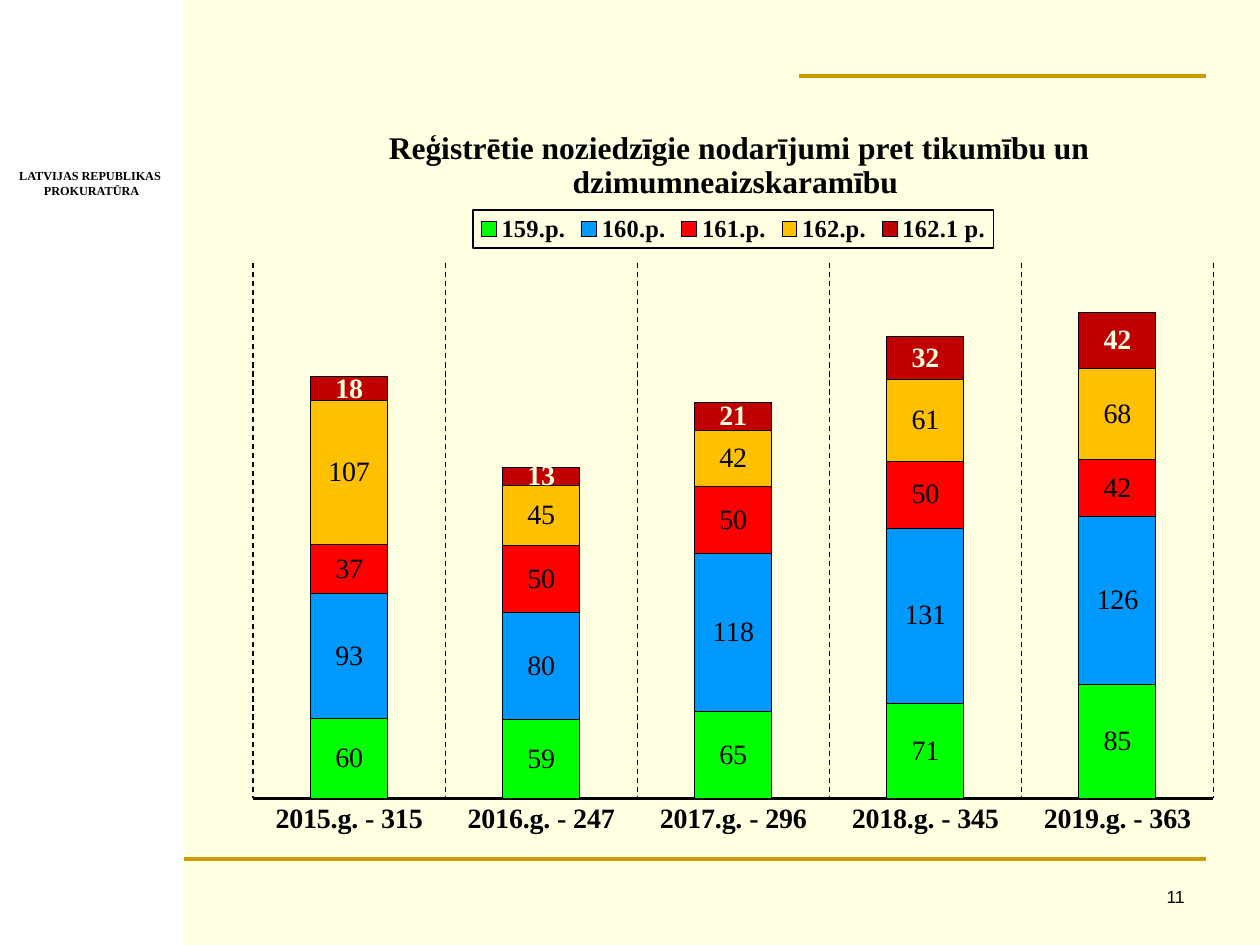
"""Build a slide with a stacked column chart of registered offences by year."""
import pptx
import pptx.chart.data
import pptx.dml.color
import pptx.enum.chart
import pptx.enum.dml
import pptx.enum.shapes
import pptx.enum.text
import pptx.oxml
import pptx.oxml.ns
import pptx.util

Inches = pptx.util.Inches
Pt = pptx.util.Pt
qn = pptx.oxml.ns.qn

COLORS = {
    "cream": "FFFFE1", "white": "FFFFFF", "gold": "CC9900", "black": "000000",
    "green": "00FF00", "blue": "0099FF", "red": "FF0000",
    "amber": "FFC000", "crimson": "C00000",
}
SERIF = "Times New Roman"
YEARS = ["2015.g. - 315", "2016.g. - 247", "2017.g. - 296", "2018.g. - 345", "2019.g. - 363"]
ARTICLES = [
    ("159.p.", [60, 59, 65, 71, 85], "green"),
    ("160.p.", [93, 80, 118, 131, 126], "blue"),
    ("161.p.", [37, 50, 50, 50, 42], "red"),
    ("162.p.", [107, 45, 42, 61, 68], "amber"),
    ("162.1 p.", [18, 13, 21, 32, 42], "crimson"),
]
TITLE = "Reģistrētie noziedzīgie nodarījumi pret tikumību un dzimumneaizskaramību "


def rgb(name):
    return pptx.dml.color.RGBColor.from_string(COLORS[name])


def style_font(font, size, color="black", bold=False, name=SERIF):
    font.size = Pt(size)
    font.bold = bold
    font.name = name
    font.color.rgb = rgb(color)


def style_line(line, color, width):
    line.color.rgb = rgb(color)
    line.width = Pt(width)


def add_panel(page, left, top, width, height, color):
    panel = page.shapes.add_shape(
        pptx.enum.shapes.MSO_SHAPE.RECTANGLE,
        Inches(left), Inches(top), Inches(width), Inches(height))
    panel.shadow.inherit = False
    panel.fill.solid()
    panel.fill.fore_color.rgb = rgb(color)
    panel.line.fill.background()


def add_rule(page, left, right, height):
    rule = page.shapes.add_connector(
        pptx.enum.shapes.MSO_CONNECTOR.STRAIGHT,
        Inches(left), Inches(height), Inches(right), Inches(height))
    style_line(rule.line, "gold", 2.25)
    rule._element.spPr.append(pptx.oxml.parse_xml(
        f'<a:effectLst {pptx.oxml.ns.nsdecls("a")}/>'))


def add_text(page, left, top, width, height, text, align, wrap, **font):
    box = page.shapes.add_textbox(Inches(left), Inches(top), Inches(width), Inches(height))
    box.text_frame.word_wrap = wrap
    box.text_frame.text = text
    for paragraph in box.text_frame.paragraphs:
        paragraph.alignment = align
        for span in paragraph.runs:
            style_font(span.font, **font)


def set_layout(element, index, x, y, width=None, height=None, inner=False):
    for old in element.findall(qn("c:layout")):
        element.remove(old)
    target = '<c:layoutTarget val="inner"/>' if inner else ""
    sizes = f'<c:w val="{width}"/><c:h val="{height}"/>' if width else ""
    element.insert(index, pptx.oxml.parse_xml(
        f'<c:layout {pptx.oxml.ns.nsdecls("c")}><c:manualLayout>{target}'
        f'<c:xMode val="edge"/><c:yMode val="edge"/>'
        f'<c:x val="{x}"/><c:y val="{y}"/>{sizes}</c:manualLayout></c:layout>'))


def fill_after(element, outline):
    line = f'<a:solidFill><a:srgbClr val="{COLORS["black"]}"/></a:solidFill>' if outline else "<a:noFill/>"
    element.addnext(pptx.oxml.parse_xml(
        f'<c:spPr {pptx.oxml.ns.nsdecls("c", "a")}>'
        f'<a:solidFill><a:srgbClr val="{COLORS["cream"]}"/></a:solidFill>'
        f'<a:ln w="{Pt(1)}">{line}</a:ln></c:spPr>'))


def style_series(series, color):
    series.format.fill.solid()
    series.format.fill.fore_color.rgb = rgb(color)
    style_line(series.format.line, "black", 0.5)
    labels = series.data_labels
    labels.show_value = True
    labels.position = pptx.enum.chart.XL_LABEL_POSITION.CENTER
    dark = color == "crimson"
    style_font(labels.font, 16, "cream" if dark else "black", dark)


def style_axes(chart):
    years = chart.category_axis
    years.major_tick_mark = pptx.enum.chart.XL_TICK_MARK.NONE
    style_font(years.tick_labels.font, 16, bold=True)
    style_line(years.format.line, "black", 1.5)
    years.has_major_gridlines = True
    grid = years.major_gridlines.format.line
    style_line(grid, "black", 0.75)
    grid.dash_style = pptx.enum.dml.MSO_LINE.DASH
    counts = chart.value_axis
    counts.minimum_scale, counts.maximum_scale = 0, 400
    counts.has_major_gridlines = False
    counts.visible = False


def style_legend(chart):
    chart.has_legend = True
    legend = chart.legend
    legend.position = pptx.enum.chart.XL_LEGEND_POSITION.TOP
    legend.include_in_layout = False
    style_font(legend.font, 14, bold=True)
    set_layout(legend._element, 1, 0.24, 0.156, 0.52, 0.05)
    fill_after(legend._element.find(qn("c:overlay")), outline=True)


def add_offence_chart(page):
    data = pptx.chart.data.CategoryChartData()
    data.categories = YEARS
    for name, values, _ in ARTICLES:
        data.add_series(name, values)
    chart = page.shapes.add_chart(
        pptx.enum.chart.XL_CHART_TYPE.COLUMN_STACKED,
        Inches(1.85), Inches(0.73), Inches(7.94), Inches(6.01), data).chart
    style_font(chart.font, 10)
    chart.has_title = True
    chart.chart_title.text_frame.text = TITLE
    style_font(chart.chart_title.text_frame.paragraphs[0].runs[0].font, 18, bold=True)
    set_layout(chart.chart_title._element, 1, 0.15, 0.04)
    plot = chart.plots[0]
    plot.gap_width, plot.overlap = 150, 100
    plot.vary_by_categories = False
    for series, (_, _, color) in zip(plot.series, ARTICLES):
        style_series(series, color)
    style_axes(chart)
    style_legend(chart)
    frame = chart._chartSpace.find(qn("c:chart"))
    set_layout(frame.find(qn("c:plotArea")), 0, 0.02, 0.226, 0.96, 0.707, inner=True)
    fill_after(frame, outline=False)


def main():
    deck = pptx.Presentation()
    deck.slide_width, deck.slide_height = Inches(10), Inches(7.5)
    page = deck.slides.add_slide(deck.slide_layouts[6])
    page.background.fill.solid()
    page.background.fill.fore_color.rgb = rgb("cream")
    align = pptx.enum.text.PP_ALIGN
    add_panel(page, 0, 0, 1.46, 7.5, "white")
    add_rule(page, 1.46, 9.57, 6.82)
    add_rule(page, 6.34, 9.57, 0.6)
    add_text(page, 0.05, 1.29, 1.33, 0.33, "LATVIJAS REPUBLIKAS\n PROKURATŪRA",
             align.CENTER, False, size=7, bold=True)
    add_text(page, 7.42, 6.98, 2.08, 0.35, "11", align.RIGHT, True, size=10, name="Arial")
    add_offence_chart(page)
    deck.save("out.pptx")


if __name__ == "__main__":
    main()
